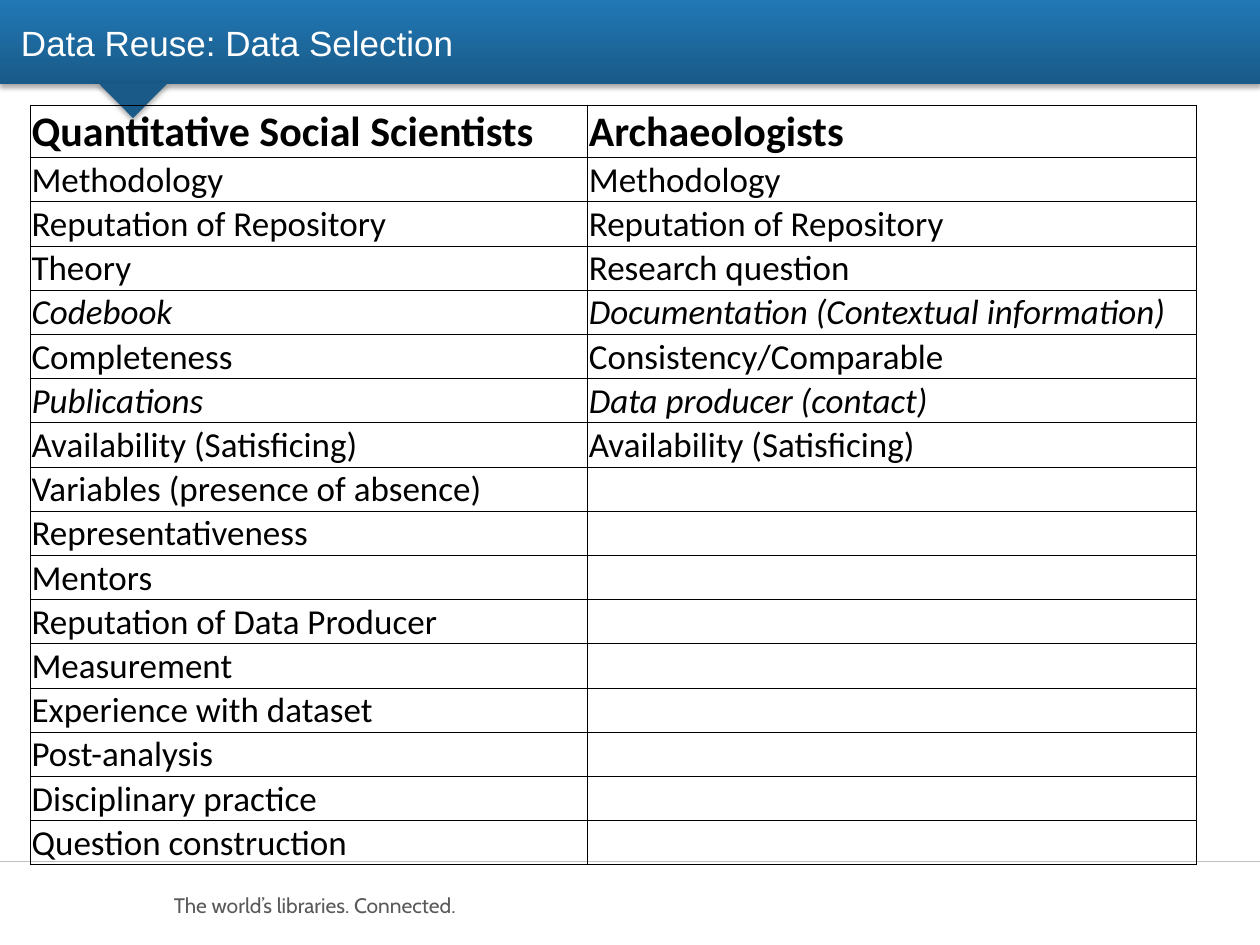
from lxml.etree import SubElement
from pptx import Presentation
from pptx.dml.color import RGBColor
from pptx.enum.shapes import MSO_CONNECTOR as Connector, MSO_SHAPE as Shape
from pptx.enum.text import MSO_ANCHOR as Anchor, PP_ALIGN as Align
from pptx.oxml import parse_xml
from pptx.oxml.ns import nsdecls, qn
from pptx.util import Pt

TITLE = "Data Reuse: Data Selection"
TAGLINE = "The world’s libraries. Connected."
COLUMNS = {
    "Quantitative Social Scientists": [
        "Methodology", "Reputation of Repository", "Theory", "Codebook",
        "Completeness", "Publications", "Availability (Satisficing)",
        "Variables (presence of absence)", "Representativeness", "Mentors",
        "Reputation of Data Producer", "Measurement", "Experience with dataset",
        "Post-analysis", "Disciplinary practice", "Question construction",
    ],
    "Archaeologists": [
        "Methodology", "Reputation of Repository", "Research question",
        "Documentation (Contextual information)", "Consistency/Comparable",
        "Data producer (contact)", "Availability (Satisficing)",
    ],
}
ITALIC = {"Codebook", "Publications", "Documentation (Contextual information)",
          "Data producer (contact)"}
COLUMN_WIDTHS = [318.5, 348]
HEADER_HEIGHT, ROW_HEIGHT = 28.2, 24
SLIDE_WIDTH, SLIDE_HEIGHT = 720, 540
BANNER_HEIGHT = 48
DARK_BLUE, BLUE = "195A88", "2178B5"


def rgb(value):
    return RGBColor.from_string(value)


def add_run(paragraph, text, font, size, color, bold=False, italic=False):
    run = paragraph.add_run()
    run.text = text
    run.font.name, run.font.size = font, Pt(size)
    run.font.bold, run.font.italic = bold, italic
    run.font.color.rgb = rgb(color)


def set_margins(box, left, top, right, bottom):
    box.margin_left, box.margin_top = Pt(left), Pt(top)
    box.margin_right, box.margin_bottom = Pt(right), Pt(bottom)


def add_shadowed(shapes, kind, left, top, width, height):
    """Add a borderless shape with a soft shadow below it."""
    shape = shapes.add_shape(kind, Pt(left), Pt(top), Pt(width), Pt(height))
    shape.line.fill.background()
    shape.element.spPr.append(parse_xml(
        f'<a:effectLst {nsdecls("a")}><a:outerShdw blurRad="{Pt(3.1)}" dist="{Pt(1.8)}" '
        'dir="5400000" rotWithShape="0"><a:srgbClr val="000000"><a:alpha val="35000"/>'
        '</a:srgbClr></a:outerShdw></a:effectLst>'))
    return shape


def add_borders(cell, color, width):
    properties = cell._tc.get_or_add_tcPr()
    for position, side in enumerate(("lnL", "lnR", "lnT", "lnB")):
        properties.insert(position, parse_xml(
            f'<a:{side} {nsdecls("a")} w="{Pt(width)}"><a:solidFill>'
            f'<a:srgbClr val="{color}"/></a:solidFill></a:{side}>'))


def add_footer(shapes):
    tagline = shapes.add_textbox(Pt(92.2), Pt(506.2), Pt(202.3), Pt(21.6))
    frame = tagline.text_frame
    frame.word_wrap = True
    frame.vertical_anchor = Anchor.MIDDLE
    add_run(frame.paragraphs[0], TAGLINE, "Cabin", 12, "595959")
    rule = shapes.add_connector(Connector.STRAIGHT, Pt(0), Pt(492), Pt(SLIDE_WIDTH), Pt(492))
    rule.line.color.rgb = rgb("BFBFBF")
    rule.line.width = Pt(0.25)
    SubElement(rule.element.spPr, qn("a:effectLst"))


def add_banner(shapes):
    banner = add_shadowed(shapes, Shape.ROUNDED_RECTANGLE, 0, 0, SLIDE_WIDTH, BANNER_HEIGHT)
    banner.adjustments[0] = 0
    banner.fill.gradient()
    banner.fill.gradient_angle = 90
    for stop, color in zip(banner.fill.gradient_stops, (DARK_BLUE, BLUE)):
        stop.color.rgb = rgb(color)
    pointer = add_shadowed(shapes, Shape.ISOSCELES_TRIANGLE, 56.2, 47.5, 39.6, 20)
    pointer.rotation = 180
    pointer.fill.solid()
    pointer.fill.fore_color.rgb = rgb(DARK_BLUE)


def format_title(title):
    title.left, title.top, title.width, title.height = Pt(12), Pt(0), Pt(672), Pt(BANNER_HEIGHT)
    frame = title.text_frame
    set_margins(frame, 0, 3.6, 0, 3.6)
    frame.word_wrap = False
    frame.vertical_anchor = Anchor.MIDDLE
    frame.paragraphs[0].alignment = Align.LEFT
    add_run(frame.paragraphs[0], TITLE, "Arial", 20, "FFFFFF")


def add_criteria_table(shapes):
    entries = [[heading, *items] for heading, items in COLUMNS.items()]
    row_count = max(map(len, entries))
    heights = [HEADER_HEIGHT] + [ROW_HEIGHT] * (row_count - 1)
    table = shapes.add_table(row_count, len(entries), Pt(17.3), Pt(60),
                             Pt(sum(COLUMN_WIDTHS)), Pt(sum(heights))).table
    table.first_row = table.horz_banding = False
    for row, height in zip(table.rows, heights):
        row.height = Pt(height)
    for column, width in zip(table.columns, COLUMN_WIDTHS):
        column.width = Pt(width)
    for cell in table.iter_cells():
        set_margins(cell, 0.75, 0.75, 0.75, 0)
        cell.vertical_anchor = Anchor.BOTTOM
        cell.fill.background()
        add_borders(cell, "000000", 0.5)
    for column_index, texts in enumerate(entries):
        for row_index, text in enumerate(texts):
            is_header = row_index == 0
            add_run(table.cell(row_index, column_index).text_frame.paragraphs[0], text,
                    "Calibri", 24 if is_header else 20, "000000",
                    bold=is_header, italic=text in ITALIC)


def main():
    presentation = Presentation()
    presentation.slide_width, presentation.slide_height = Pt(SLIDE_WIDTH), Pt(SLIDE_HEIGHT)
    slide = presentation.slides.add_slide(presentation.slide_layouts[5])
    title = slide.shapes.title
    add_footer(slide.shapes)
    add_banner(slide.shapes)
    title.element.getparent().append(title.element)  # bring the title above the banner
    format_title(title)
    add_criteria_table(slide.shapes)
    presentation.save("out.pptx")


if __name__ == "__main__":
    main()
